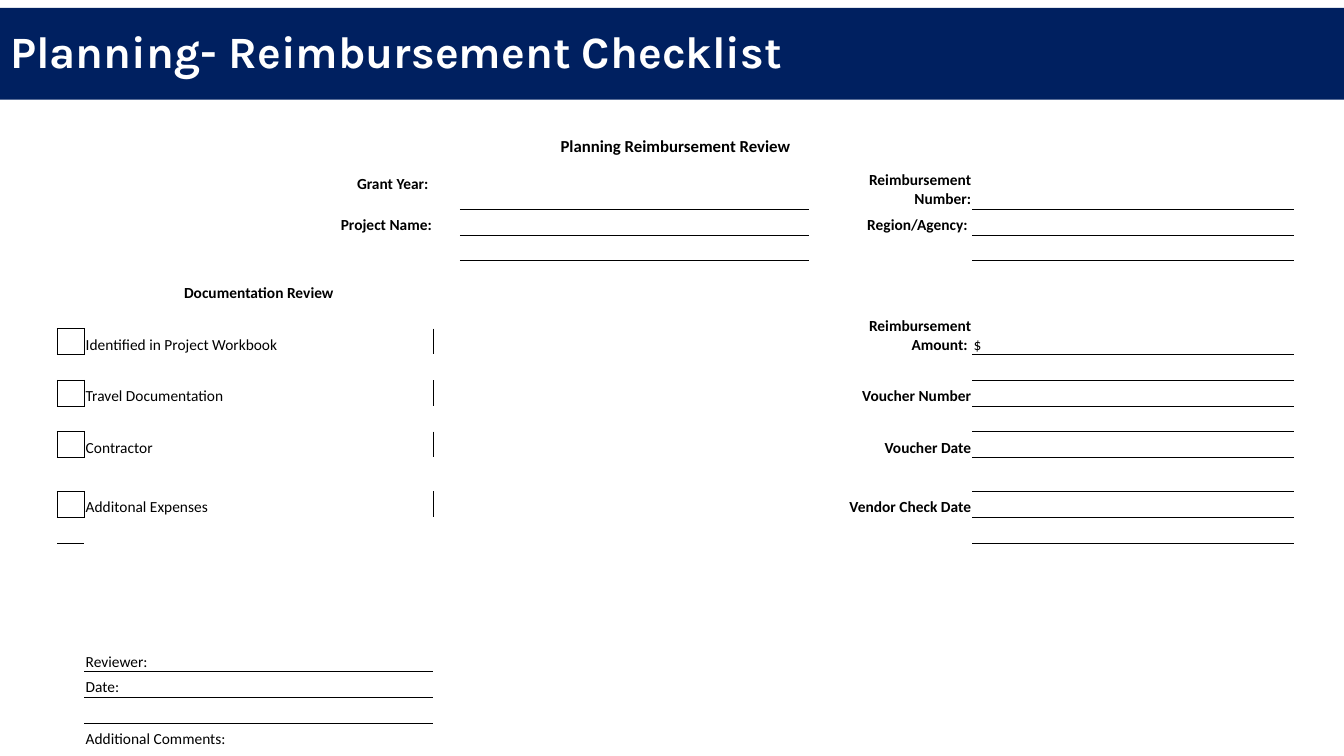
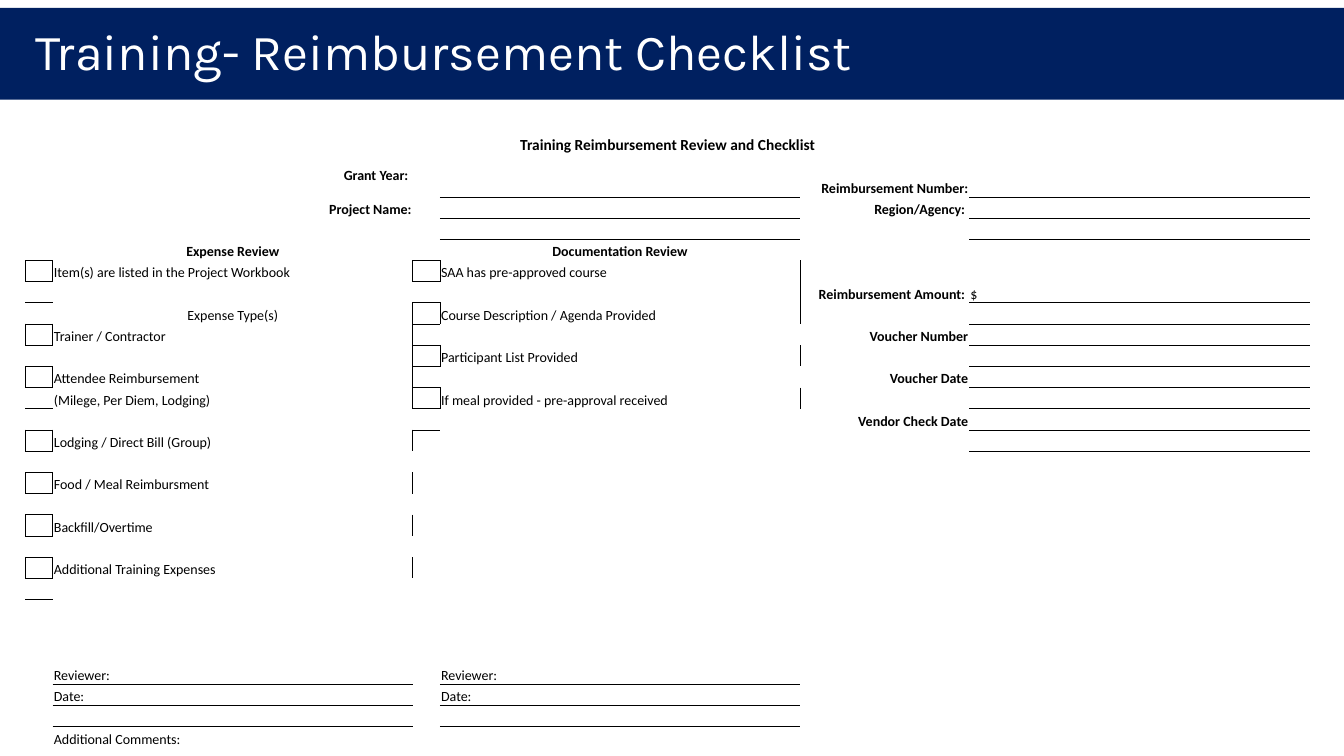
from collections import defaultdict

from lxml import etree
from pptx import Presentation
from pptx.dml.color import RGBColor
from pptx.enum.shapes import MSO_SHAPE
from pptx.enum.text import MSO_ANCHOR, MSO_AUTO_SIZE, PP_ALIGN
from pptx.oxml import parse_xml
from pptx.oxml.ns import nsdecls, qn
from pptx.util import Cm, Pt

NAVY = RGBColor(0x00, 0x20, 0x60)
WHITE = RGBColor(0xFF, 0xFF, 0xFF)
BLACK = RGBColor(0x00, 0x00, 0x00)
LEFT, MID, RIGHT = PP_ALIGN.LEFT, PP_ALIGN.CENTER, PP_ALIGN.RIGHT
MIDDLE, BOTTOM = MSO_ANCHOR.MIDDLE, MSO_ANCHOR.BOTTOM
RECT, NO_FIT = MSO_SHAPE.RECTANGLE, MSO_AUTO_SIZE.NONE
NO_GRID = "{2D5ABB26-0587-4C30-8999-92F81FD0307C}"
TOP, HIGH = Cm(0.2), Cm(2.31)  # title band


def put(frame, text, size=11, bold=False, color=BLACK, font="Calibri", align=LEFT):
    para = frame.paragraphs[0]
    para.alignment = align
    run = para.add_run()
    run.text = text
    run.font.size, run.font.bold, run.font.name = Pt(size), bold, font
    run.font.color.rgb = color


def rule(cell, sides):
    props = cell._tc.get_or_add_tcPr()
    for side in "LRTB":
        if side in sides:
            props.append(parse_xml(
                f'<a:ln{side} {nsdecls("a")} w="6350"><a:solidFill>'
                f'<a:srgbClr val="{BLACK}"/></a:solidFill></a:ln{side}>'))


# Cells that both forms share: row, column, text
LABELS = [
    (1, 1, "Grant Year: "), (1, 4, "Reimbursement Number:"),
    (2, 1, "Project Name:"), (2, 4, "Region/Agency: "),
    (5, 4, "Reimbursement Amount: "), (8, 4, "Voucher Number"),
    (10, 4, "Voucher Date"), (12, 4, "Vendor Check Date"),
]
LINES = [(1, 3), (2, 3)] + [(row, 5) for row in (1, 2, 6, 8, 10, 12)]

# What differs: lengths in cm, "odd" holds the rows of special height
FORMS = [
    dict(
        title="Planning- Reimbursement Checklist", left=0, wide=34.39,
        big=32, heavy=True,
        name="Planning Reimbursement Review", head=12, size=11,
        at=(1.44, 3.28), tall=15.6, cols=(0.69, 8.79, 0.67, 8.79, 4.13, 8.1),
        odd={0: 0.69, 1: 1.3, 4: 1.07, 11: 0.86},
        heads=[(4, 1, "Documentation Review")],
        boxes=[(6, 0, "Identified in Project Workbook"),
               (8, 0, "Travel Documentation"),
               (10, 0, "Contractor"),
               (12, 0, "Additonal Expenses")],
        notes=[], sign=18, signers=(1,),
    ),
    dict(
        title="Training- Reimbursement Checklist", left=0.64, wide=33.22,
        big=36, heavy=False,
        name="Training Reimbursement Review and Checklist", head=11, size=10,
        at=(0.64, 3.33), tall=15.52, cols=(0.69, 9.07, 0.69, 9.07, 4.27, 8.59),
        odd={0: 0.56, 1: 1.07},
        heads=[(4, 1, "Expense Review"), (4, 3, "Documentation Review")],
        boxes=[(5, 0, "Item(s) are listed in the Project Workbook"),
               (8, 0, "Trainer / Contractor"),
               (10, 0, "Attendee Reimbursement"),
               (13, 0, "Lodging / Direct Bill (Group)"),
               (15, 0, "Food / Meal Reimbursment"),
               (17, 0, "Backfill/Overtime"),
               (19, 0, "Additional Training Expenses"),
               (5, 2, "SAA has pre-approved course"),
               (7, 2, "Course Description / Agenda Provided"),
               (9, 2, "Participant List Provided"),
               (11, 2, "If meal provided - pre-approval received")],
        notes=[(7, 1, "Expense Type(s)", MID),
               (11, 1, "(Milege, Per Diem, Lodging)", LEFT)],
        sign=24, signers=(1, 3),
    ),
]

deck = Presentation()
deck.slide_width, deck.slide_height = Cm(33.87), Cm(19.05)
layout = deck.slide_layouts[5]

for form in FORMS:
    slide = deck.slides.add_slide(layout)

    # Band, moved once to the back of the layout
    if form is FORMS[0]:
        band = slide.shapes.add_shape(RECT, 0, TOP, deck.slide_width, HIGH)
        band.shadow.inherit = False
        band.fill.solid()
        band.fill.fore_color.rgb = NAVY
        band.line.fill.background()
        layout.shapes._spTree.insert(2, band._element)

    # Title
    title = slide.shapes.title
    title.left, title.top = Cm(form["left"]), TOP
    title.width, title.height = Cm(form["wide"]), HIGH
    frame = title.text_frame
    frame.auto_size, frame.vertical_anchor = NO_FIT, MIDDLE
    put(frame, form["title"], size=form["big"], bold=form["heavy"],
        color=WHITE, font="Karla")
    frame.paragraphs[0].line_spacing = 0.9

    # Empty table
    cols, odd, size, sign = form["cols"], form["odd"], form["size"], form["sign"]
    count = sign + 4
    step = (form["tall"] - sum(odd.values())) / (count - len(odd))
    left, top = form["at"]
    table = slide.shapes.add_table(
        count, len(cols), Cm(left), Cm(top), Cm(sum(cols)), Cm(form["tall"])).table
    table.first_row = table.horz_banding = False
    table._tbl.tblPr.find(qn("a:tableStyleId")).text = NO_GRID
    for col, width in enumerate(cols):
        table.columns[col].width = Cm(width)
    for row in range(count):
        table.rows[row].height = Cm(odd.get(row, step))

    # Borders, set on both cells that meet at an edge
    edges = defaultdict(set)
    lines = LINES + [(sign + k, col) for k in (0, 1) for col in form["signers"]]
    for row, col in lines + [box[:2] for box in form["boxes"]]:
        edges[row, col].add("B")
        edges[row + 1, col].add("T")
    for row, col, text in form["boxes"]:
        edges[row, col].update("LRT")
        edges[row - 1, col].add("B")
        edges[row, col + 1].add("L")
        if col:
            edges[row, col - 1].add("R")
    for row in range(count):
        for col in range(len(cols)):
            cell = table.cell(row, col)
            rule(cell, edges[row, col])
            cell.fill.background()
            cell.margin_left = cell.margin_right = cell.margin_top = Cm(0.03)
            cell.margin_bottom = 0
            cell.vertical_anchor = BOTTOM
            para = cell.text_frame.paragraphs[0]._p
            etree.SubElement(para, qn("a:endParaRPr")).set("sz", str(size * 100))
    table.cell(0, 0).merge(table.cell(0, 5))
    table.cell(5, 4).merge(table.cell(6, 4))
    table.cell(1, 1).vertical_anchor = MIDDLE

    # Table text
    put(table.cell(0, 0).text_frame, form["name"], size=form["head"],
        bold=True, align=MID)
    for row, col, text in LABELS:
        put(table.cell(row, col).text_frame, text, size=size, bold=True, align=RIGHT)
    for row, col, text in form["heads"]:
        put(table.cell(row, col).text_frame, text, size=size, bold=True, align=MID)
    plain = [(6, 5, "$", LEFT), (count - 1, 1, "Additional Comments:", LEFT)]
    plain += [(row, col + 1, text, LEFT) for row, col, text in form["boxes"]]
    for col in form["signers"]:
        plain += [(sign, col, "Reviewer:", LEFT), (sign + 1, col, "Date:", LEFT)]
    for row, col, text, align in plain + form["notes"]:
        put(table.cell(row, col).text_frame, text, size=size, align=align)

deck.save("out.pptx")
